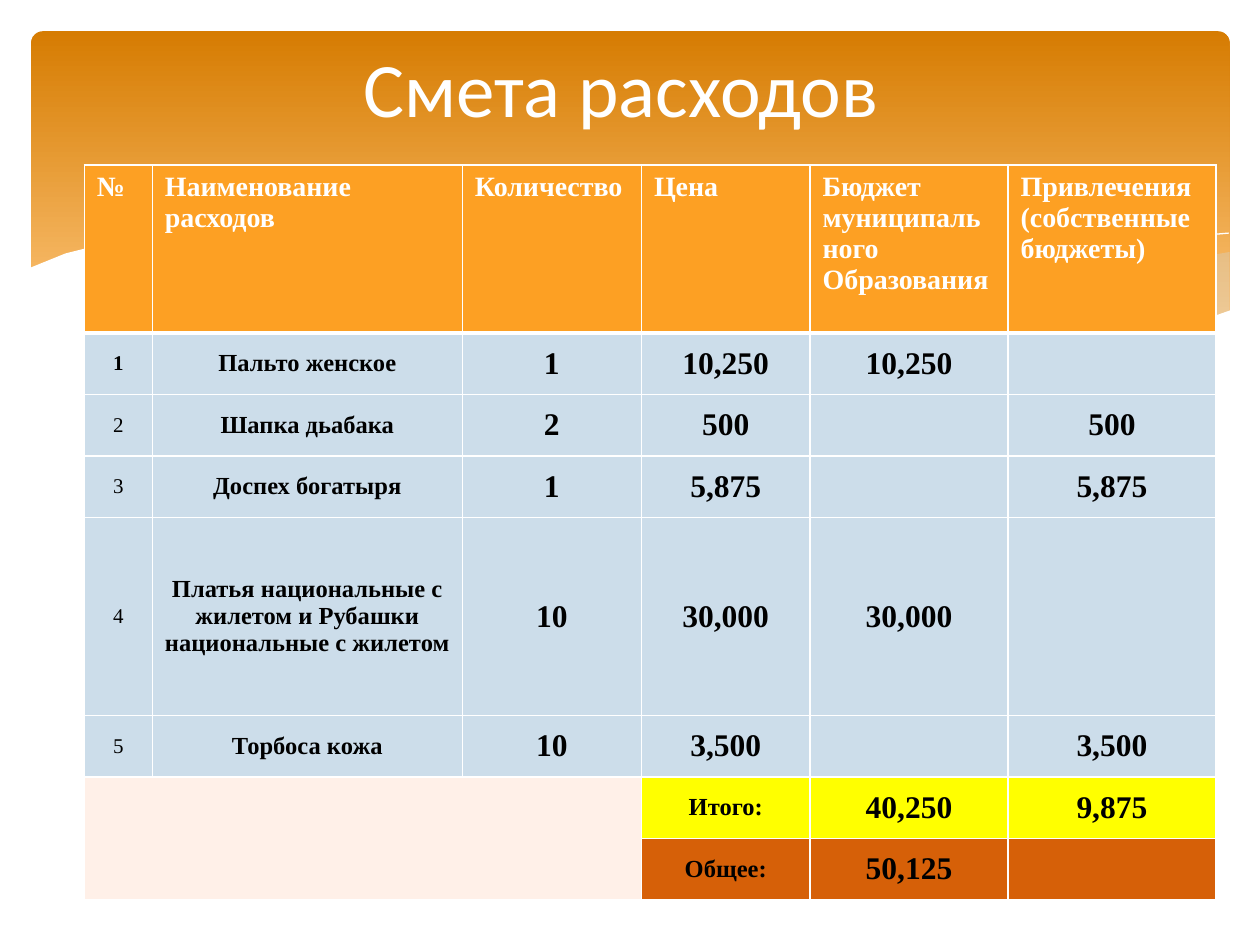
from lxml import etree
from pptx import Presentation
from pptx import util as u
from pptx.dml.color import RGBColor
from pptx.enum import shapes, text
from pptx.oxml import ns

WHITE, BLACK = "FFFFFF", "000000"
ORANGE, BLUE, CREAM, YELLOW, BROWN = "FDA023", "CCDDEA", "FFF0E8", "FFFF00", "D66008"

FRONT_WAVE = [(24.79, 5.08), (23.75, 5.26), (21.87, 5.66), (19.13, 6.3), (16.79, 6.73),
              (18.59, 6.96), (20.4, 7.06), (22.15, 6.96), (23.57, 6.68), (24.79, 6.27)]
BACK_WAVE = [(22.68, 6.93), (20.5, 6.6), (17.93, 6.1), (15.98, 5.64), (14.1, 5.21),
             (12.42, 4.93), (10.67, 4.75), (9.17, 4.7), (7.26, 4.85), (9.19, 5.16),
             (11.4, 5.64), (14.38, 6.3), (16.89, 6.76), (19, 7.01), (20.78, 7.06)]
FALLING_CURVE = [(7.85, 4.95), (8.74, 4.83), (10.57, 4.75), (12.42, 4.83),
                 (14.78, 5.08), (17.65, 5.56), (20.19, 6.12), (23.04, 6.91)]
RISING_CURVE = [(15.57, 6.53), (17.65, 5.97), (20.47, 5.33), (22.38, 4.98),
                (23.83, 4.78), (24.77, 4.7)]
PAPER_EDGE = [(24.82, 6.25), (23.88, 6.58), (22.83, 6.83), (21.59, 6.99), (20.55, 7.04),
              (18.9, 6.96), (16.97, 6.73), (14.71, 6.35), (11.35, 5.59), (8.64, 5),
              (6.88, 4.78), (4.9, 4.67), (3.35, 4.72), (2.16, 4.9), (1.32, 5.11),
              (0.58, 5.41), (0.58, 8.36), (24.82, 8.36)]

COLUMN_WIDTHS = [1.37, 6.25, 3.61, 3.4, 3.99, 4.19]
ROW_HEIGHTS = [3.38, 1.24, 1.24, 1.24, 3.99, 1.24, 1.24, 1.24]
HEADER = ["№", "Наименование расходов", "Количество", "Цена",
          "Бюджет муниципального Образования", "Привлечения (собственные бюджеты)"]
EXPENSES = [
    ["1", "Пальто женское", "1", "10,250", "10,250", ""],
    ["2", "Шапка дьабака", "2", "500", "", "500"],
    ["3", "Доспех богатыря", "1", "5,875", "", "5,875"],
    ["4", "Платья национальные с жилетом и Рубашки национальные с жилетом",
     "10", "30,000", "30,000", ""],
    ["5", "Торбоса кожа", "10", "3,500", "", "3,500"],
]
TOTALS = [(["Итого:", "40,250", "9,875"], YELLOW), (["Общее:", "50,125", ""], BROWN)]


def color(value):
    return RGBColor.from_string(value)


class SlideBuilder:
    font_name = "Times New Roman"

    def __init__(self, slide):
        self.slide = slide

    def panel(self, left, top, width, height, stops):
        """Rounded rectangle with a gradient running downwards."""
        shape = self.slide.shapes.add_shape(
            shapes.MSO_SHAPE.ROUNDED_RECTANGLE, *map(u.Cm, (left, top, width, height)))
        shape.adjustments[0] = 0.034
        shape.shadow.inherit = False
        shape.line.fill.background()
        shape.fill.gradient()
        shape.fill.gradient_angle = 270
        for stop, (position, value) in zip(shape.fill.gradient_stops, stops):
            stop.position = position
            stop.color.rgb = color(value)

    def outline(self, points, closed):
        start, *others = [(u.Cm(x), u.Cm(y)) for x, y in points]
        builder = self.slide.shapes.build_freeform(*start)
        builder.add_line_segments(others, close=closed)
        shape = builder.convert_to_shape()
        shape.shadow.inherit = False
        return shape

    def area(self, points, fill, opacity=100):
        shape = self.outline(points, True)
        shape.line.fill.background()
        shape.fill.solid()
        shape.fill.fore_color.rgb = color(fill)
        if opacity < 100:
            value = shape.element.spPr.find(".//" + ns.qn("a:srgbClr"))
            etree.SubElement(value, ns.qn("a:alpha"), val=str(opacity * 1000))

    def curve(self, points):
        shape = self.outline(points, False)
        shape.fill.background()
        shape.line.color.rgb = color(WHITE)
        shape.line.width = u.Pt(0)

    def add_text(self, frame, content, align=text.PP_ALIGN.CENTER, **style):
        paragraph = frame.paragraphs[0]
        paragraph.alignment = align
        run = paragraph.add_run()
        run.text = content
        values = {"name": self.font_name, "bold": True, "color": BLACK, **style}
        run.font.color.rgb = color(values.pop("color"))
        for key, value in values.items():
            setattr(run.font, key, value)

    def title(self, content, left, top, width, height):
        box = self.slide.shapes.add_textbox(*map(u.Cm, (left, top, width, height)))
        frame = box.text_frame
        frame.word_wrap = True
        frame.vertical_anchor = text.MSO_ANCHOR.MIDDLE
        self.add_text(frame, content, name="Calibri", size=u.Pt(44), bold=False, color=WHITE)

    def table(self, left, top, widths, heights):
        frame = self.slide.shapes.add_table(
            len(heights), len(widths),
            *map(u.Cm, (left, top, sum(widths), sum(heights))))
        for column, width in zip(frame.table.columns, widths):
            column.width = u.Cm(width)
        for row, height in zip(frame.table.rows, heights):
            row.height = u.Cm(height)
        return frame.table

    def cell(self, cell, content, fill, anchor=text.MSO_ANCHOR.MIDDLE,
             top=1, bottom=1, **style):
        """Cell with white borders; top and bottom are border widths in points."""
        properties = cell._tc.get_or_add_tcPr()
        for side, width in (("L", 1), ("R", 1), ("T", top), ("B", bottom)):
            border = etree.SubElement(properties, ns.qn("a:ln" + side), w=str(u.Pt(width)))
            solid = etree.SubElement(border, ns.qn("a:solidFill"))
            etree.SubElement(solid, ns.qn("a:srgbClr"), val=WHITE)
        cell.fill.solid()
        cell.fill.fore_color.rgb = color(fill)
        cell.vertical_anchor = anchor
        if content:
            self.add_text(cell.text_frame, content, **style)


def fill_estimate(builder, table):
    for column, heading in enumerate(HEADER):
        builder.cell(table.cell(0, column), heading, ORANGE, text.MSO_ANCHOR.TOP, bottom=3,
                     align=text.PP_ALIGN.LEFT, size=u.Pt(16), color=WHITE)

    sizes = [12, 14, 18, 18, 18, 18]
    for row, expense in enumerate(EXPENSES, 1):
        for column, (content, size) in enumerate(zip(expense, sizes)):
            builder.cell(table.cell(row, column), content, BLUE, top=3 if row == 1 else 1,
                         size=u.Pt(size), bold=column > 0 or row == 1)

    first_total = len(EXPENSES) + 1
    table.cell(first_total, 0).merge(table.cell(first_total + 1, 2))
    for row, (contents, fill) in enumerate(TOTALS, first_total):
        for column in range(3):
            builder.cell(table.cell(row, column), "", CREAM)
        for column, content in enumerate(contents, 3):
            builder.cell(table.cell(row, column), content, fill,
                         size=u.Pt(14 if column == 3 else 18))


def main():
    presentation = Presentation()
    presentation.slide_width, presentation.slide_height = u.Cm(25.4), u.Cm(19.05)
    builder = SlideBuilder(presentation.slides.add_slide(presentation.slide_layouts[6]))

    builder.panel(0.63, 0.63, 24.16, 6.86, [(0, "D67C02"), (0.9, "FEC67B")])
    builder.area(FRONT_WAVE, BLUE, 29)
    builder.area(BACK_WAVE, BLUE, 40)
    builder.curve(FALLING_CURVE)
    builder.curve(RISING_CURVE)
    builder.area(PAPER_EDGE, WHITE)
    builder.title("Смета расходов", 1.09, 0, 22.86, 3.48)
    fill_estimate(builder, builder.table(1.7, 3.33, COLUMN_WIDTHS, ROW_HEIGHTS))
    presentation.save("out.pptx")


if __name__ == "__main__":
    main()
